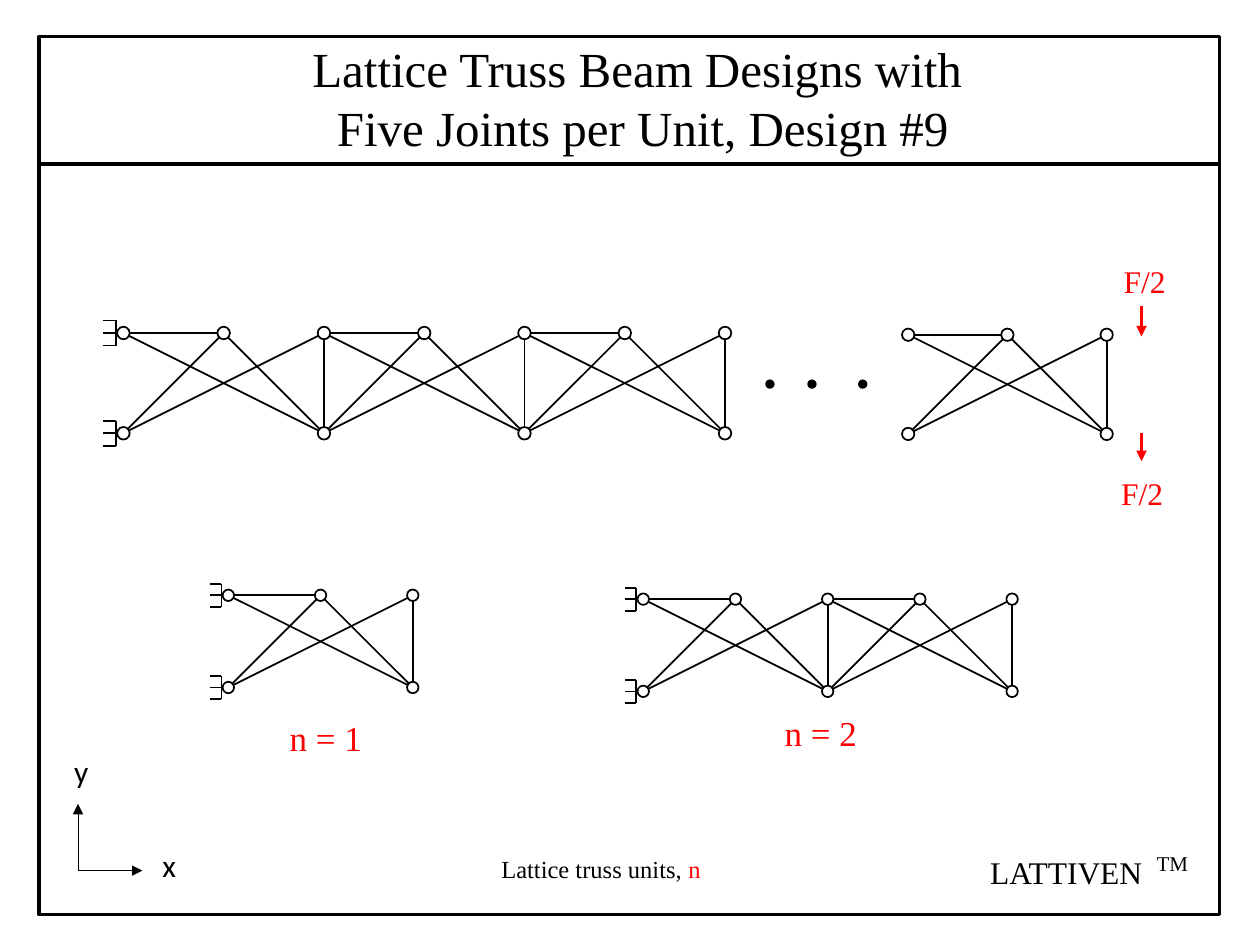
import pptx
import pptx.util
import pptx.dml.color
import pptx.enum.shapes
import pptx.oxml.ns
from lxml import etree

Pt = pptx.util.Pt
SHAPE = pptx.enum.shapes.MSO_SHAPE
STRAIGHT = pptx.enum.shapes.MSO_CONNECTOR.STRAIGHT
qn = pptx.oxml.ns.qn

COLORS = {"ink": "000000", "paper": "FFFFFF", "load": "FF0000"}
SERIF = "Times New Roman"
SANS = "Calibri"


def rgb(name):
    return pptx.dml.color.RGBColor.from_string(COLORS[name])


class Sketch:
    def __init__(self, slide):
        self.s = slide

    def line(self, start, end, color="ink", width=1, arrow=False):
        c = self.s.shapes.add_connector(STRAIGHT, *(Pt(v) for v in (*start, *end)))
        c.line.color.rgb = rgb(color)
        c.line.width = Pt(width)
        if arrow:
            etree.SubElement(c.line._get_or_add_ln(), qn("a:tailEnd"), type="triangle")
        etree.SubElement(c._element.spPr, qn("a:effectLst"))

    def shape(self, kind, x, y, w, h, fill=None, width=1):
        sp = self.s.shapes.add_shape(kind, Pt(x), Pt(y), Pt(w), Pt(h))
        sp.shadow.inherit = False
        if fill:
            sp.fill.solid()
            sp.fill.fore_color.rgb = rgb(fill)
        else:
            sp.fill.background()
        sp.line.color.rgb = rgb("ink")
        sp.line.width = Pt(width)

    def dot(self, center, d, fill="paper"):
        x, y = center
        self.shape(SHAPE.OVAL, x - d / 2, y - d / 2, d, d, fill)

    def text(self, x, y, w, h, paragraphs, size, font=SERIF, indents=(0,)):
        tf = self.s.shapes.add_textbox(Pt(x), Pt(y), Pt(w), Pt(h)).text_frame
        tf.word_wrap = True
        for i, (runs, indent) in enumerate(zip(paragraphs, indents)):
            p = tf.add_paragraph() if i else tf.paragraphs[0]
            p.font.size = Pt(size)
            p.font.name = font
            if indent:
                p._p.get_or_add_pPr().set("marL", str(Pt(indent)))
            for words, color in runs:
                r = p.add_run()
                r.text = words
                r.font.color.rgb = rgb(color)

    def support(self, joint, d):
        x, y = joint
        wall = x - 0.6 * d
        self.line((wall, y - d), (wall, y + d))
        for dy in (-d, 0, d):
            self.line((wall - d, y + dy), (wall, y + dy))

    def truss(self, x, y, bay, units, fixed=True):
        d = bay / 8
        top = [(x + i * bay, y) for i in range(2 * units + 1)]
        bottom = [(x + i * bay, y + bay) for i in range(0, 2 * units + 1, 2)]
        for u in range(units):
            left, middle, right = top[2 * u:2 * u + 3]
            foot, next_foot = bottom[u:u + 2]
            for start, end in ((left, middle), (foot, middle), (middle, next_foot),
                               (left, next_foot), (foot, right), (right, next_foot)):
                self.line(start, end)
        if fixed:
            self.support(top[0], d)
            self.support(bottom[0], d)
        for joint in top + bottom:
            self.dot(joint, d)


def main():
    prs = pptx.Presentation()
    prs.slide_width, prs.slide_height = Pt(720), Pt(540)
    sk = Sketch(prs.slides.add_slide(prs.slide_layouts[6]))

    sk.shape(SHAPE.RECTANGLE, 22.3, 20.9, 674.7, 501.8, width=2)
    sk.line((22.3, 93.6), (697, 93.6), width=2)
    sk.text(171.4, 18.7, 409.7, 74.9,
            [[("Lattice Truss Beam Designs with", "ink")],
             [("Five Joints per Unit, Design #9", "ink")]], 28, indents=(0, 14))

    sk.truss(70.5, 190.3, 57.3, 3)
    sk.truss(519, 191.3, 56.7, 1, fixed=False)
    sk.truss(130.5, 340.2, 52.7, 1)
    sk.truss(367.6, 342.4, 52.7, 2)
    for x in (440, 464, 493):
        sk.dot((x, 219.5), 4.3, "ink")

    for y, tip in ((175, 192.2), (247.7, 263.5)):
        sk.line((652.3, y), (652.3, tip), "load", 2, arrow=True)
    for x, y in ((635, 146.2), (633.6, 267.1)):
        sk.text(x, y, 43.2, 28.8, [[("F/2", "load")]], 18)

    sk.text(158.4, 406.1, 63.4, 31.7, [[("n = 1", "load")]], 20)
    sk.text(441.3, 403.2, 75, 31.7, [[("n = 2", "load")]], 20)
    sk.text(279.4, 484.6, 133.2, 24.5,
            [[("Lattice truss units, ", "ink"), ("n", "load")]], 14)

    origin = (44.6, 497.5)
    for tip in ((81.4, 497.5), (44.6, 459.4)):
        sk.line(origin, tip, width=0.5, arrow=True)
    sk.text(85.7, 480.2, 22.3, 28.8, [[("x", "ink")]], 18, SANS)
    sk.text(35.3, 426.2, 22.3, 28.8, [[("y", "ink")]], 18, SANS)

    sk.text(558.7, 483.8, 109.4, 28.8, [[("LATTIVEN", "ink")]], 18)
    sk.text(653.8, 482.3, 36.7, 21.6, [[("TM", "ink")]], 12)

    prs.save("out.pptx")


if __name__ == "__main__":
    main()
